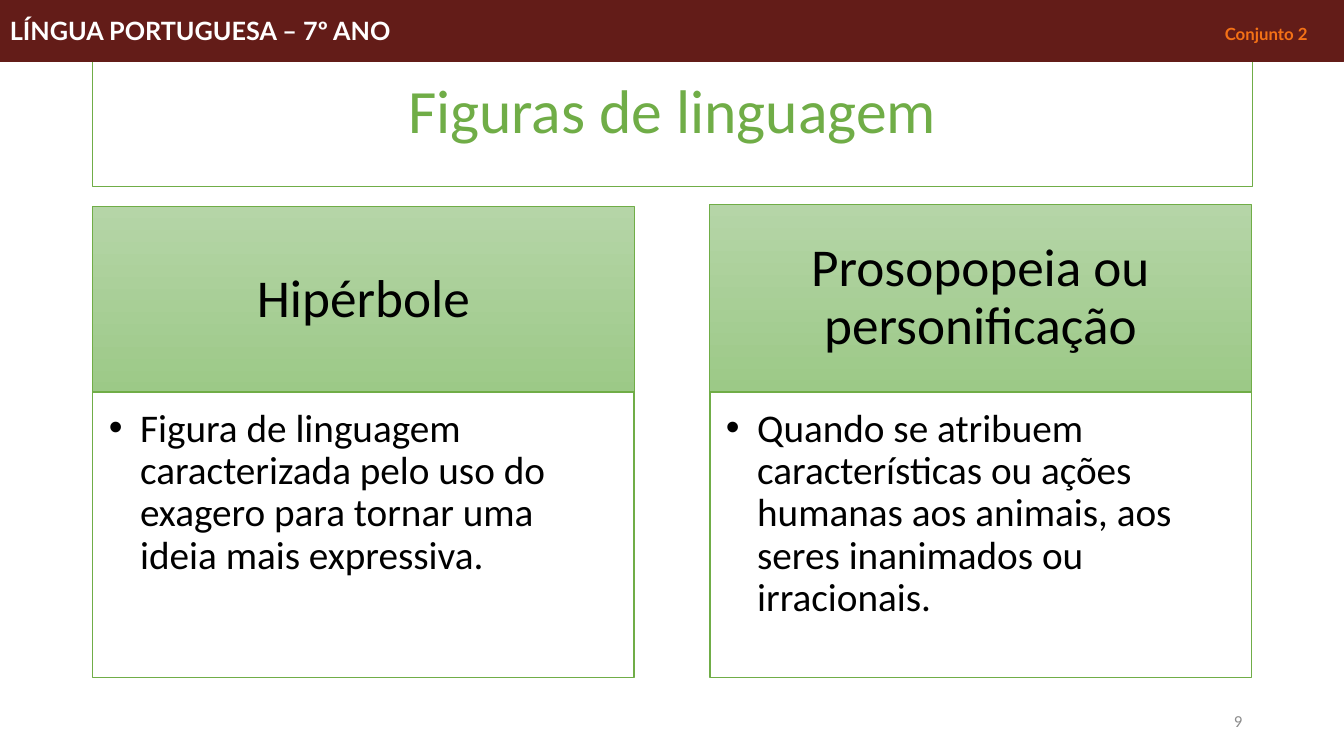
from dataclasses import dataclass
from lxml.etree import SubElement
from pptx import Presentation
from pptx.dml.color import RGBColor
from pptx.enum.shapes import MSO_SHAPE
from pptx.enum.text import MSO_ANCHOR as Anchor, MSO_AUTO_SIZE as AutoSize, PP_ALIGN as Align
from pptx.oxml.ns import qn
from pptx.util import Inches, Pt


@dataclass(frozen=True)
class Theme:
    green: str = "70AD47"
    green_top: str = "B5D5A7"
    green_bottom: str = "9CC987"
    maroon: str = "631C18"
    orange: str = "F47116"
    gray: str = "8C8C8C"
    white: str = "FFFFFF"
    black: str = "000000"
    font: str = "Calibri"
    band_font: str = "Lato"
    title: int = 44
    heading: int = 38
    body: int = 28
    band: int = 18
    small: int = 12


def place(box, bounds, margins=(0.1, 0.05, 0.1, 0.05), anchor=Anchor.MIDDLE):
    box.left, box.top, box.width, box.height = map(Inches, bounds)
    left, top, right, bottom = map(Inches, margins)
    settings = {
        "margin_left": left, "margin_top": top, "margin_right": right, "margin_bottom": bottom,
        "auto_size": AutoSize.NONE, "word_wrap": True, "vertical_anchor": anchor,
    }
    for name, value in settings.items():
        setattr(box.text_frame, name, value)


def write(box, text, size, color, align=Align.LEFT, font=None, bold=False, spacing=0.9):
    paragraph = box.text_frame.paragraphs[0]
    paragraph.alignment = align
    paragraph.line_spacing = spacing
    paragraph.space_before = Pt(0)
    run = paragraph.add_run()
    run.text = text
    run.font.color.rgb = RGBColor.from_string(color)
    for name, value in {"size": Pt(size), "name": font or theme.font, "bold": bold}.items():
        setattr(run.font, name, value)
    return paragraph


theme = Theme()
deck = Presentation()
deck.slide_width, deck.slide_height = Inches(13.33), Inches(7.5)
slide = deck.slides.add_slide(deck.slide_layouts.get_by_name("Comparison"))
parts = {part.placeholder_format.idx: part for part in slide.placeholders}

title = parts[0]
place(title, (0.92, 0.4, 11.5, 1.45))
write(title, "Figuras de linguagem", theme.title, theme.green, Align.CENTER)

figures = [
    (0.92, 2.05, "Hipérbole",
     "Figura de linguagem caracterizada pelo uso do exagero para tornar uma ideia mais expressiva."),
    (7.04, 2.03, "Prosopopeia ou personificação",
     "Quando se atribuem características ou ações humanas aos animais, aos seres inanimados ou irracionais."),
]
outlined = [(title, 1)]
for column, (left, top, term, meaning) in enumerate(figures):
    heading, definition = parts[2 * column + 1], parts[2 * column + 2]
    place(heading, (left, top, 5.37, 1.86), (0.3, 0.17, 0.3, 0.17))
    write(heading, term, theme.heading, theme.black, Align.CENTER)
    heading.fill.gradient()
    heading.fill.gradient_angle = 270
    for stop, color in zip(heading.fill.gradient_stops, (theme.green_top, theme.green_bottom)):
        stop.color.rgb = RGBColor.from_string(color)

    place(definition, (left, 3.89, 5.37, 2.83), (0.16, 0.16, 0.22, 0.24), Anchor.TOP)
    bullet = write(definition, meaning, theme.body, theme.black).font._element.getparent()
    bullet.set("marL", str(Inches(0.31)))
    bullet.set("indent", str(-Inches(0.31)))
    SubElement(bullet, qn("a:buChar")).set("char", "•")
    bullet.append(bullet.find(qn("a:defRPr")))
    outlined += [(heading, 0.5), (definition, 1)]

for box, weight in outlined:
    box.line.color.rgb = RGBColor.from_string(theme.green)
    box.line.width = Pt(weight)
for box in (title, parts[2], parts[4]):
    box.fill.solid()
    box.fill.fore_color.rgb = RGBColor.from_string(theme.white)

page_number = slide.shapes.add_textbox(0, 0, 0, 0)
place(page_number, (9.42, 6.95, 3, 0.4))
write(page_number, "9", theme.small, theme.gray, Align.RIGHT, spacing=1.0)

band = slide.shapes.add_shape(MSO_SHAPE.RECTANGLE, 0, 0, 0, 0)
place(band, (0, 0, 13.33, 0.61))
band.shadow.inherit = False
band.fill.solid()
band.fill.fore_color.rgb = band.line.color.rgb = RGBColor.from_string(theme.maroon)
band.line.width = Pt(0.75)
write(band, "LÍNGUA PORTUGUESA – 7º ANO\t", theme.band, theme.white,
      font=theme.band_font, bold=True, spacing=1.0)
subject = write(band, "Conjunto 2", theme.small, theme.orange,
                font=theme.band_font, bold=True, spacing=1.0)
tabs = SubElement(subject._p.get_or_add_pPr(), qn("a:tabLst"))
SubElement(tabs, qn("a:tab"), pos=str(Inches(12.05)), algn="l")

deck.save("out.pptx")
